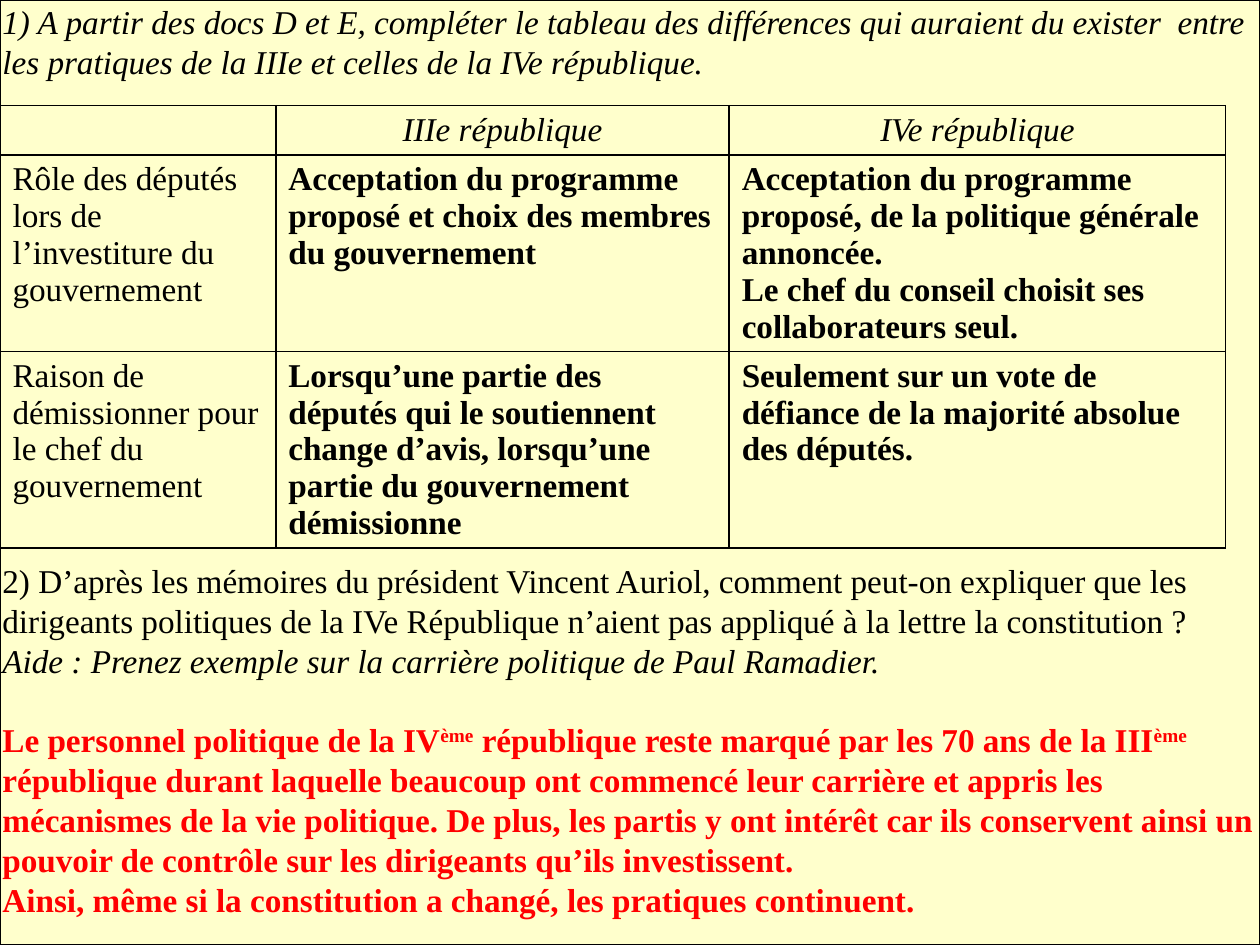
from dataclasses import dataclass

from lxml import etree
from pptx import Presentation
from pptx.dml.color import RGBColor
from pptx.enum.shapes import MSO_SHAPE
from pptx.enum.text import MSO_ANCHOR, PP_ALIGN
from pptx.oxml.ns import qn
from pptx.util import Cm, Pt

RECTANGLE = MSO_SHAPE.RECTANGLE
TOP = MSO_ANCHOR.TOP
LEFT = PP_ALIGN.LEFT
CENTER = PP_ALIGN.CENTER
BLANK_LAYOUT = 6


@dataclass(frozen=True)
class Theme:
    paper: RGBColor = RGBColor(0xFF, 0xFF, 0xCC)
    ink: RGBColor = RGBColor(0, 0, 0)
    answer: RGBColor = RGBColor(0xFF, 0, 0)
    font: str = "Times New Roman"
    size: float = 19
    line_pitch: float = 22.8
    frame_width: float = 0.75
    border_width: float = 1


THEME = Theme()
PLAIN = {"bold": False, "italic": False}
ITALIC = {"bold": False, "italic": True}
BOLD = {"bold": True, "italic": False}
SUPERSCRIPT = "ème"

QUESTIONS = [
    (0, ITALIC, THEME.ink, [
        "1) A partir des docs D et E, compléter le tableau des différences qui auraient "
        "du exister  entre les pratiques de la IIIe et celles de la IVe république."]),
    (12, PLAIN, THEME.ink, [
        "2) D’après les mémoires du président Vincent Auriol, comment peut-on expliquer "
        "que les dirigeants politiques de la IVe République n’aient pas appliqué à la "
        "lettre la constitution ?"]),
    (0, ITALIC, THEME.ink, [
        "Aide : Prenez exemple sur la carrière politique de Paul Ramadier."]),
    (1, BOLD, THEME.answer, [
        "Le personnel politique de la IV", SUPERSCRIPT,
        " république reste marqué par les 70 ans de la III", SUPERSCRIPT,
        " république durant laquelle beaucoup ont commencé leur carrière et appris les "
        "mécanismes de la vie politique. De plus, les partis y ont intérêt car ils "
        "conservent ainsi un pouvoir de contrôle sur les dirigeants qu’ils investissent."]),
    (0, BOLD, THEME.answer, [
        "Ainsi, même si la constitution a changé, les pratiques continuent."]),
]

COLUMN_WIDTHS = [5.56, 9.14, 10.01]
ROW_HEIGHTS = [0.99, 3.96, 3.96]
TABLE_ROWS = [
    [[""], ["IIIe république"], ["IVe république"]],
    [["Rôle des députés lors de l’investiture du gouvernement"],
     ["Acceptation du programme proposé et choix des membres du gouvernement"],
     ["Acceptation du programme proposé, de la politique générale annoncée.",
      "Le chef du conseil choisit ses collaborateurs seul."]],
    [["Raison de démissionner pour le chef du gouvernement"],
     ["Lorsqu’une partie des députés qui le soutiennent change d’avis, "
      "lorsqu’une partie du gouvernement démissionne"],
     ["Seulement sur un vote de défiance de la majorité absolue des députés."]],
]


def apply_format(target, values):
    for name, value in values.items():
        setattr(target, name, value)


def format_font(font, style, color):
    apply_format(font, {"name": THEME.font, "size": Pt(THEME.size), **style})
    font.color.rgb = color


def add_run(paragraph, text, style, color):
    run = paragraph.add_run()
    run.text = text
    format_font(run.font, style, color)
    if text == SUPERSCRIPT:
        run._r.get_or_add_rPr().set("baseline", "30000")


def paragraph_at(text_frame, index):
    return text_frame.add_paragraph() if index else text_frame.paragraphs[0]


def add_question_sheet(slide, width, height):
    sheet = slide.shapes.add_shape(RECTANGLE, 0, 0, width, height)
    sheet.shadow.inherit = False
    sheet.fill.solid()
    sheet.fill.fore_color.rgb = THEME.paper
    sheet.line.color.rgb = THEME.ink
    sheet.line.width = Pt(THEME.frame_width)
    text_frame = sheet.text_frame
    apply_format(text_frame, {
        "word_wrap": True, "vertical_anchor": TOP,
        "margin_left": Cm(0.05), "margin_right": Cm(0.05),
        "margin_top": Cm(0.03), "margin_bottom": Cm(0.03),
    })
    for index, (lines_before, style, color, texts) in enumerate(QUESTIONS):
        paragraph = paragraph_at(text_frame, index)
        apply_format(paragraph, {
            "alignment": LEFT,
            "line_spacing": Pt(THEME.line_pitch),
            "space_before": Pt(lines_before * THEME.line_pitch),
        })
        for text in texts:
            add_run(paragraph, text, style, color)


def draw_borders(cell):
    properties = cell._tc.get_or_add_tcPr()
    for position, side in enumerate(("lnL", "lnR", "lnT", "lnB")):
        line = etree.Element(qn(f"a:{side}"), w=str(Pt(THEME.border_width)))
        fill = etree.SubElement(line, qn("a:solidFill"))
        etree.SubElement(fill, qn("a:srgbClr"), val=str(THEME.ink))
        properties.insert(position, line)


def fill_cell(cell, texts, style, alignment):
    cell.fill.background()
    cell.vertical_anchor = TOP
    draw_borders(cell)
    for index, text in enumerate(texts):
        paragraph = paragraph_at(cell.text_frame, index)
        paragraph.alignment = alignment
        if text:
            add_run(paragraph, text, style, THEME.ink)
        else:
            format_font(paragraph.font, style, THEME.ink)


def add_comparison_table(slide):
    table = slide.shapes.add_table(
        len(ROW_HEIGHTS), len(COLUMN_WIDTHS), Cm(0), Cm(2.13),
        Cm(sum(COLUMN_WIDTHS)), Cm(sum(ROW_HEIGHTS))).table
    apply_format(table, {"first_row": False, "horz_banding": False})
    for column, width in zip(table.columns, COLUMN_WIDTHS):
        column.width = Cm(width)
    for row, height in zip(table.rows, ROW_HEIGHTS):
        row.height = Cm(height)
    for row_index, row_texts in enumerate(TABLE_ROWS):
        for column_index, texts in enumerate(row_texts):
            if row_index == 0:
                style, alignment = ITALIC, CENTER
            else:
                style, alignment = BOLD if column_index else PLAIN, LEFT
            fill_cell(table.cell(row_index, column_index), texts, style, alignment)


def main():
    presentation = Presentation()
    presentation.slide_width = Cm(25.4)
    presentation.slide_height = Cm(19.05)
    slide = presentation.slides.add_slide(presentation.slide_layouts[BLANK_LAYOUT])
    slide.background.fill.solid()
    slide.background.fill.fore_color.rgb = THEME.paper
    add_question_sheet(slide, presentation.slide_width, presentation.slide_height)
    add_comparison_table(slide)
    presentation.save("out.pptx")


if __name__ == "__main__":
    main()
